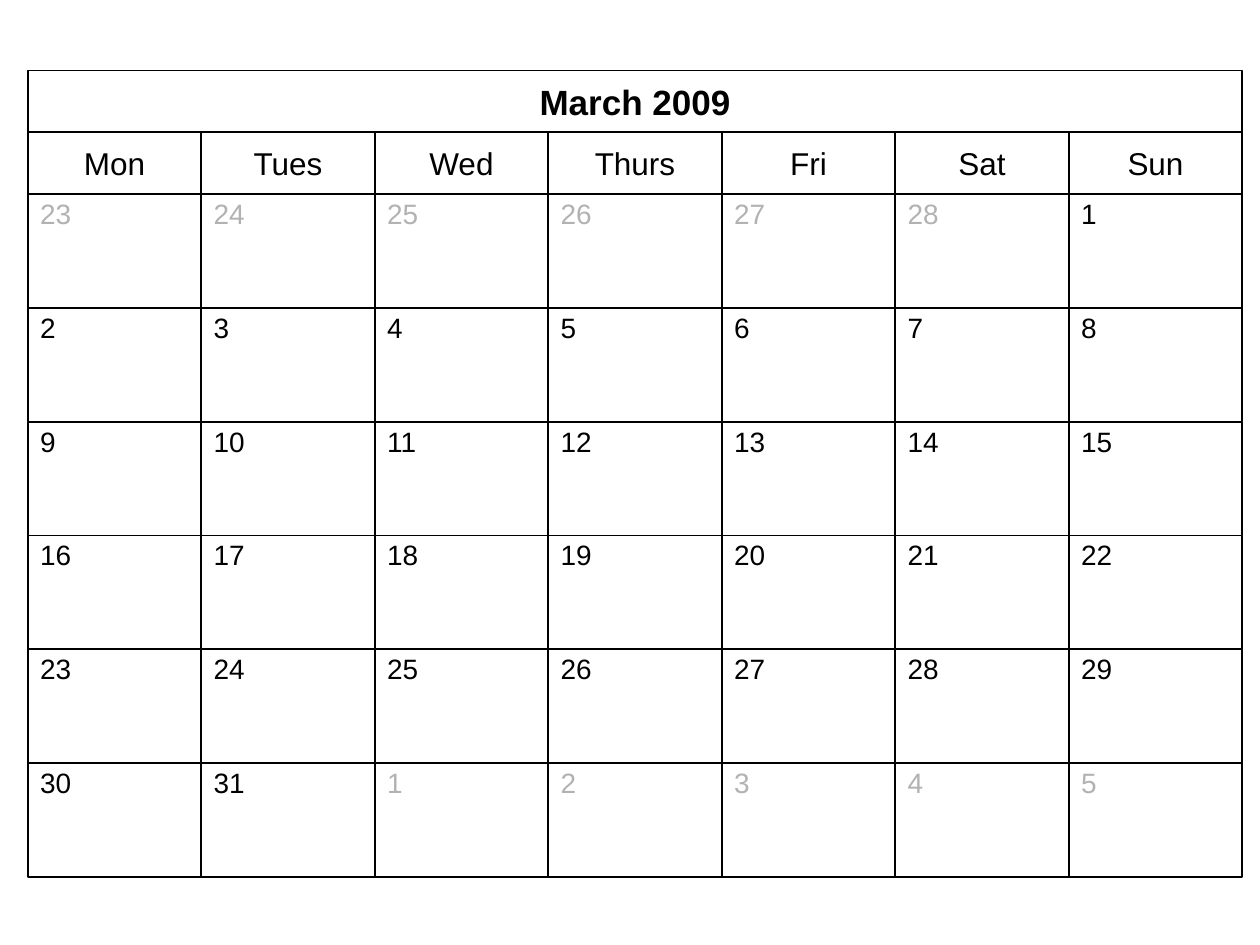
from pptx import Presentation
from pptx.dml.color import RGBColor
from pptx.enum import shapes, text
from pptx.util import Inches, Pt

COLORS = {"paper": "FFFFFF", "ink": "000000", "other_month": "B2B2B2"}
WEEKDAYS = ["Mon", "Tues", "Wed", "Thurs", "Fri", "Sat", "Sun"]
LEFT, TOP, WIDTH = 0.22, 0.56, 9.64
HEADER_HEIGHT = 0.49
WEEKS = 6
DAY_WIDTH = WIDTH / len(WEEKDAYS)
DAYS_TOP = TOP + 2 * HEADER_HEIGHT
DAY_HEIGHT = (6.96 - DAYS_TOP) / WEEKS

presentation = Presentation()
presentation.slide_width = Inches(10)
presentation.slide_height = Inches(7.5)
calendar = presentation.slides.add_slide(presentation.slide_layouts[6])


def add_box(label, *, left, top, width=DAY_WIDTH, height=HEADER_HEIGHT, size=18,
            color="ink", bold=False, align=text.PP_ALIGN.CENTER,
            anchor=text.MSO_ANCHOR.MIDDLE):
    box = calendar.shapes.add_shape(
        shapes.MSO_SHAPE.RECTANGLE,
        Inches(left), Inches(top), Inches(width), Inches(height))
    box.shadow.inherit = False
    box.fill.solid()
    box.fill.fore_color.rgb = RGBColor.from_string(COLORS["paper"])
    box.line.color.rgb = RGBColor.from_string(COLORS["ink"])
    box.line.width = Pt(1)
    frame = box.text_frame
    frame.word_wrap = True
    frame.vertical_anchor = anchor
    frame.margin_left = frame.margin_right = Inches(0.1)
    frame.margin_top = frame.margin_bottom = Inches(0.02)
    paragraph = frame.paragraphs[0]
    paragraph.alignment = align
    properties = paragraph._p.get_or_add_pPr()
    properties.set("marL", str(Inches(0.38)))
    properties.set("indent", str(-Inches(0.38)))
    run = paragraph.add_run()
    run.text = label
    run.font.name = "Arial"
    run.font.size = Pt(size)
    run.font.bold = bold
    run.font.color.rgb = RGBColor.from_string(COLORS[color])


add_box("March 2009", left=LEFT, top=TOP, width=WIDTH, size=20, bold=True)

for column, weekday in enumerate(WEEKDAYS):
    add_box(weekday, left=LEFT + column * DAY_WIDTH, top=TOP + HEADER_HEIGHT)

february = [(day, "other_month") for day in range(23, 29)]
march = [(day, "ink") for day in range(1, 32)]
april = [(day, "other_month") for day in range(1, 6)]

for index, (day, color) in enumerate(february + march + april):
    week, column = divmod(index, len(WEEKDAYS))
    add_box(str(day), left=LEFT + column * DAY_WIDTH, top=DAYS_TOP + week * DAY_HEIGHT,
            height=DAY_HEIGHT, size=16, color=color,
            align=text.PP_ALIGN.LEFT, anchor=text.MSO_ANCHOR.TOP)

presentation.save("out.pptx")
